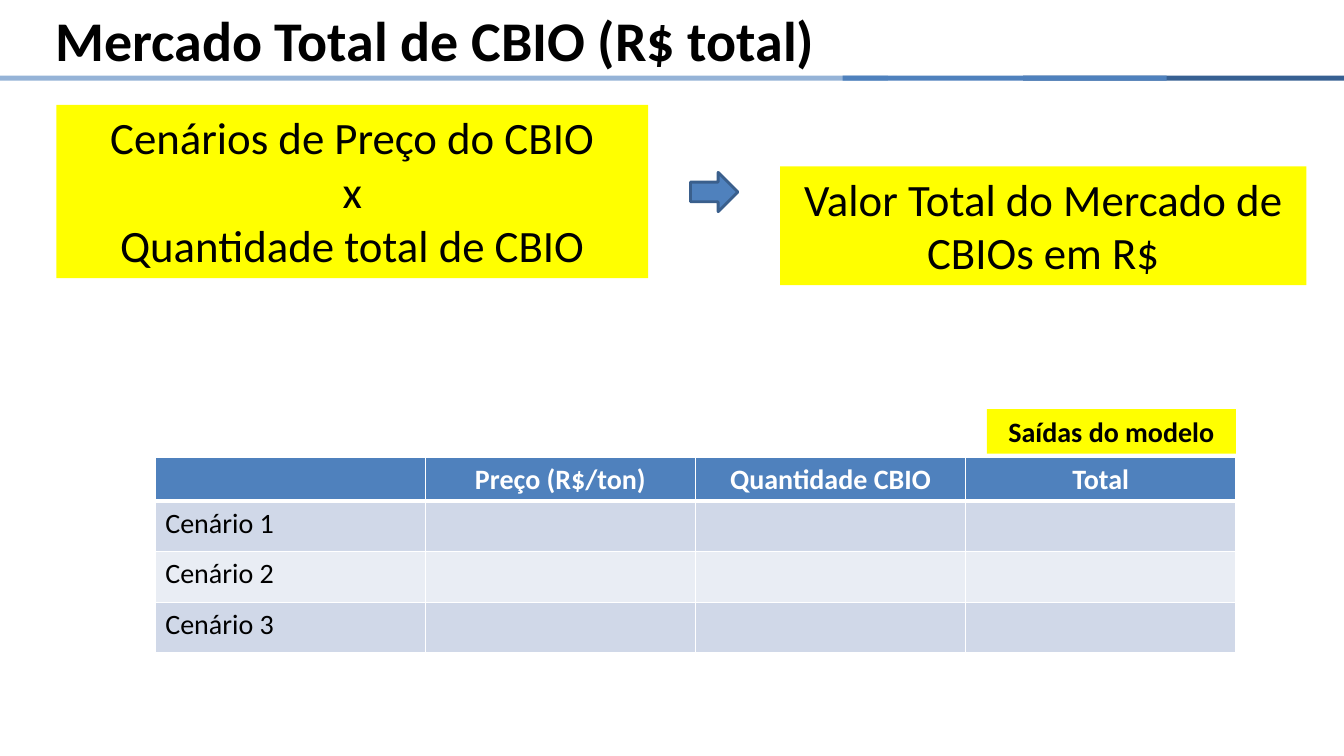
from dataclasses import dataclass

from lxml.etree import SubElement
from pptx import Presentation
from pptx.dml.color import RGBColor
from pptx.enum.shapes import MSO_SHAPE
from pptx.enum.text import MSO_ANCHOR, MSO_AUTO_SIZE, PP_ALIGN
from pptx.oxml.ns import qn
from pptx.util import Inches, Pt

FONT = "Calibri"
BLACK, WHITE, YELLOW, BLUE = "000000", "FFFFFF", "FFFF00", "4F81BD"
BANDS = ("D0D8E8", "E9EDF4")

prs = Presentation()
prs.slide_width, prs.slide_height = Inches(13.33), Inches(7.5)
s = prs.slides.add_slide(prs.slide_layouts[6])


@dataclass(frozen=True)
class Box:
    """A rectangle in percent of the slide's width and height."""
    x: float
    y: float
    w: float
    h: float

    def emu(self) -> tuple[int, int, int, int]:
        pw, ph = prs.slide_width / 100, prs.slide_height / 100
        return (round(self.x * pw), round(self.y * ph),
                round(self.w * pw), round(self.h * ph))


@dataclass(frozen=True)
class Label:
    box: Box
    lines: tuple[str, ...]
    size: int
    bold: bool = False


TITLE = Label(Box(3.38, 1.47, 78, 7.33),
              ("Mercado Total de CBIO (R$ total)",), 40, True)
BARS = (
    (Box(0, 10, 66.07, 0.67), "95B3D7"),
    (Box(76.13, 10, 23.87, 0.67), "376092"),
    (Box(62.7, 10, 24.1, 0.67), BLUE),
)
LABELS = (
    Label(Box(4.2, 13.87, 44.03, 22.93),
          ("Cenários de Preço do CBIO", "x", "Quantidade total de CBIO"), 32),
    Label(Box(58.05, 22, 39.15, 15.73),
          ("Valor Total do Mercado de CBIOs em R$",), 32),
    Label(Box(73.43, 54.13, 18.53, 5.87), ("Saídas do modelo",), 20, True),
)
ARROW = Box(51.38, 22.8, 3.52, 5.2)
TABLE = Box(11.55, 60.53, 80.4, 25.73)
HEADER_SHARE = 0.22
ROWS = (
    ("", "Preço (R$/ton)", "Quantidade CBIO", "Total"),
    ("Cenário 1", "", "", ""),
    ("Cenário 2", "", "", ""),
    ("Cenário 3", "", "", ""),
)


def rgb(color: str) -> RGBColor:
    return RGBColor.from_string(color)


def write(tf, lines: tuple[str, ...], size: int, color: str = BLACK,
          bold: bool = False, align=PP_ALIGN.CENTER) -> None:
    for i, line in enumerate(lines):
        p = tf.add_paragraph() if i else tf.paragraphs[0]
        p.alignment = align
        r = p.add_run()
        r.text = line
        r.font.name, r.font.size, r.font.bold = FONT, Pt(size), bold
        r.font.color.rgb = rgb(color)


def add_block(box: Box, fill: str, kind=MSO_SHAPE.RECTANGLE):
    sp = s.shapes.add_shape(kind, *box.emu())
    sp.shadow.inherit = False
    sp.fill.solid()
    sp.fill.fore_color.rgb = rgb(fill)
    sp.line.fill.background()
    return sp


def add_title(label: Label) -> None:
    tf = s.shapes.add_textbox(*label.box.emu()).text_frame
    tf.word_wrap = True
    tf.vertical_anchor = MSO_ANCHOR.MIDDLE
    write(tf, label.lines, label.size, bold=label.bold, align=PP_ALIGN.LEFT)


def add_label(label: Label) -> None:
    tf = add_block(label.box, YELLOW).text_frame
    tf.word_wrap = True
    tf.auto_size = MSO_AUTO_SIZE.SHAPE_TO_FIT_TEXT
    tf.vertical_anchor = MSO_ANCHOR.TOP
    write(tf, label.lines, label.size, bold=label.bold)


def add_arrow(box: Box) -> None:
    sp = add_block(box, BLUE, MSO_SHAPE.RIGHT_ARROW)
    sp.line.color.rgb = rgb("3A5F8C")
    sp.line.width = Pt(2)


def set_borders(cell, top: int, bottom: int) -> None:
    """Draw white cell borders; top and bottom widths are in points."""
    tc_pr = cell._tc.get_or_add_tcPr()
    for side, width in (("L", 1), ("R", 1), ("T", top), ("B", bottom)):
        ln = SubElement(tc_pr, qn(f"a:ln{side}"), w=str(Pt(width)))
        fill = SubElement(ln, qn("a:solidFill"))
        SubElement(fill, qn("a:srgbClr"), val=WHITE)


def add_scenarios(box: Box) -> None:
    x, y, w, h = box.emu()
    table = s.shapes.add_table(len(ROWS), len(ROWS[0]), x, y, w, h).table
    for col in table.columns:
        col.width = w // len(ROWS[0])
    header_h = round(h * HEADER_SHARE)
    for i, texts in enumerate(ROWS):
        header = i == 0
        table.rows[i].height = header_h if header else (h - header_h) // (len(ROWS) - 1)
        for j, text in enumerate(texts):
            cell = table.cell(i, j)
            set_borders(cell, 3 if i == 1 else 1, 3 if header else 1)
            cell.fill.solid()
            cell.fill.fore_color.rgb = rgb(BLUE if header else BANDS[(i - 1) % 2])
            cell.vertical_anchor = MSO_ANCHOR.MIDDLE if header else MSO_ANCHOR.TOP
            if text:
                write(cell.text_frame, (text,), 20, WHITE if header else BLACK,
                      header, PP_ALIGN.CENTER if header else PP_ALIGN.LEFT)


def main() -> None:
    for box, color in BARS:
        add_block(box, color)
    add_title(TITLE)
    for label in LABELS:
        add_label(label)
    add_arrow(ARROW)
    add_scenarios(TABLE)
    prs.save("out.pptx")


if __name__ == "__main__":
    main()
